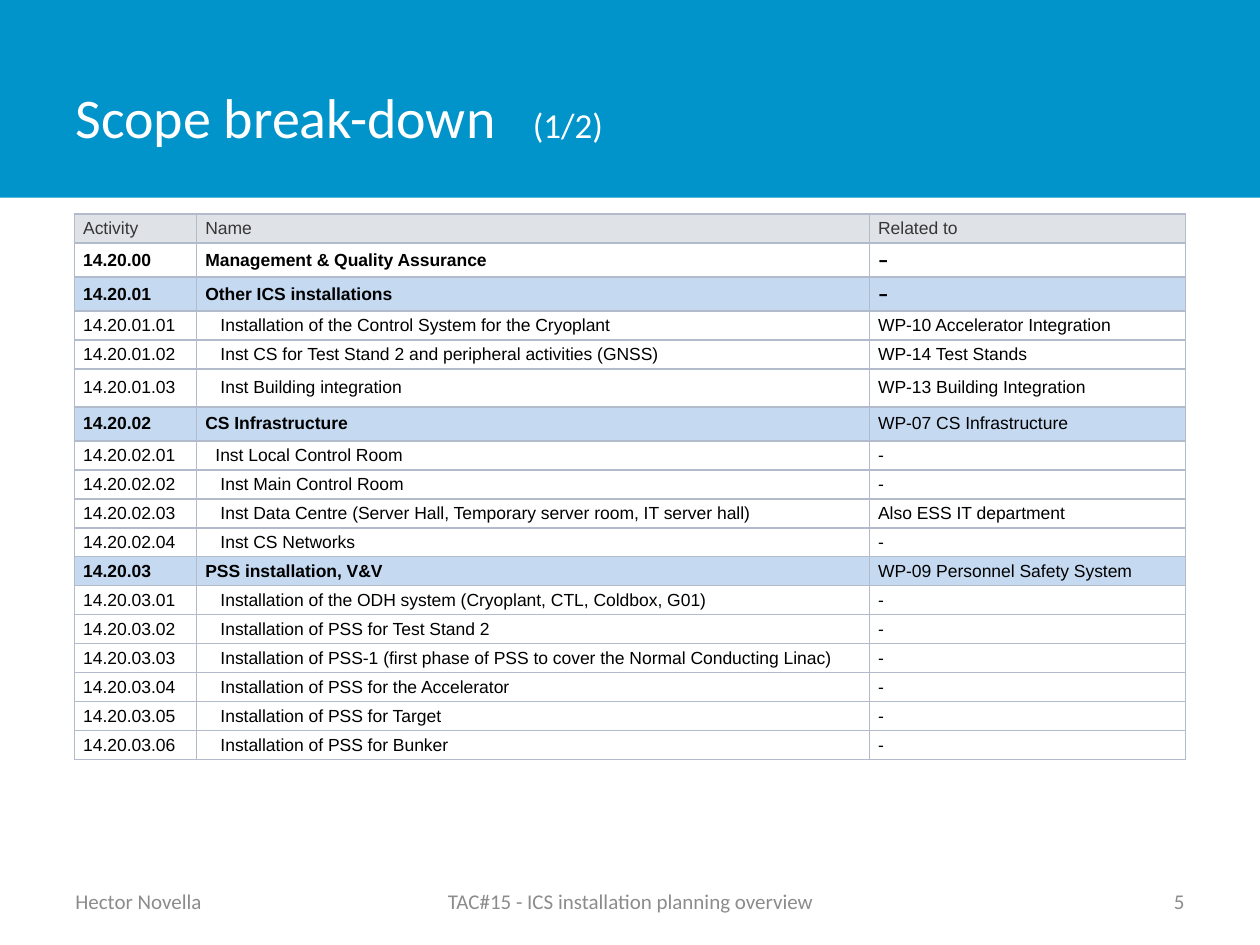
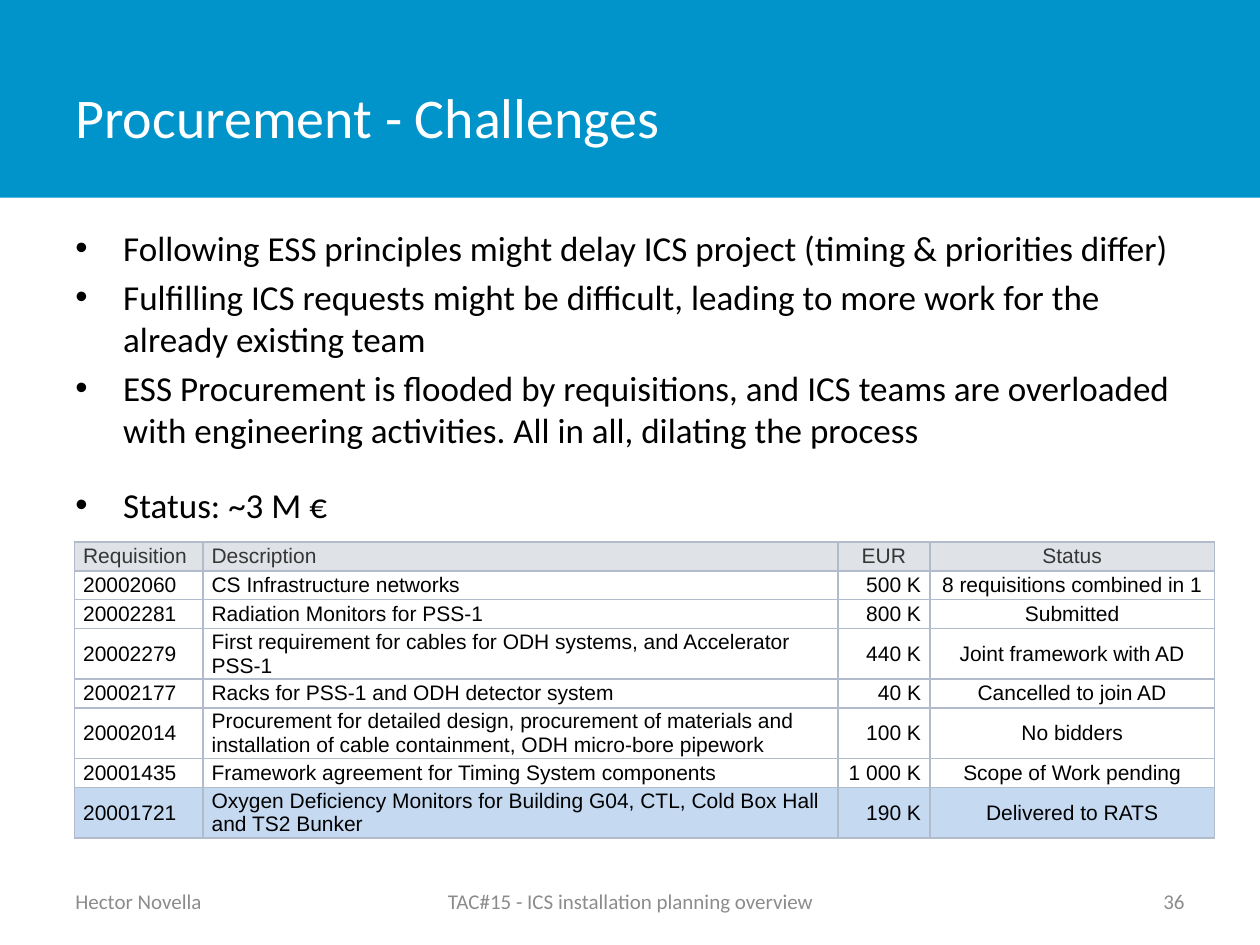
"""Build two planning slides that share a title band, a footer and a table style."""
from lxml import etree
from pptx import Presentation
from pptx import util as u
from pptx.dml.color import RGBColor
from pptx.enum import shapes, text
from pptx.oxml.ns import qn

COLOURS = {
    "band": "0094CA",
    "white": "FFFFFF",
    "black": "000000",
    "footer": "8C8C8C",
    "grid": "B1BBCC",
    "header_fill": "DFE3E8",
    "header_text": "363636",
    "highlight": "C5D9F1",
}
LEFT, CENTRE, RIGHT = text.PP_ALIGN.LEFT, text.PP_ALIGN.CENTER, text.PP_ALIGN.RIGHT
AUTHOR = "Hector Novella"
MEETING = "TAC#15 - ICS installation planning overview"
ROW_HEIGHT, TWO_LINE_HEIGHT, SECTION_HEIGHT = 0.23, 0.37, 0.27
CELL_MARGIN = 0.07
SUBITEM_INDENT = 0.12

ACTIVITY_COLUMNS = [("Activity", 0.97, LEFT), ("Name", 5.34, LEFT), ("Related to", 2.51, LEFT)]
ACTIVITIES = [
    ("14.20.00", "Management & Quality Assurance", "-"),
    ("14.20.01", "Other ICS installations", "-"),
    ("14.20.01.01", "Installation of the Control System for the Cryoplant", "WP-10 Accelerator Integration"),
    ("14.20.01.02", "Inst CS for Test Stand 2 and peripheral activities (GNSS)", "WP-14 Test Stands"),
    ("14.20.01.03", "Inst Building integration", "WP-13 Building Integration"),
    ("14.20.02", "CS Infrastructure", "WP-07 CS Infrastructure"),
    ("14.20.02.01", "Inst Local Control Room", "-"),
    ("14.20.02.02", "Inst Main Control Room", "-"),
    ("14.20.02.03", "Inst Data Centre (Server Hall, Temporary server room, IT server hall)",
     "Also ESS IT department"),
    ("14.20.02.04", "Inst CS Networks", "-"),
    ("14.20.03", "PSS installation, V&V", "WP-09 Personnel Safety System"),
    ("14.20.03.01", "Installation of the ODH system (Cryoplant, CTL, Coldbox, G01)", "-"),
    ("14.20.03.02", "Installation of PSS for Test Stand 2", "-"),
    ("14.20.03.03", "Installation of PSS-1 (first phase of PSS to cover the Normal Conducting Linac)", "-"),
    ("14.20.03.04", "Installation of PSS for the Accelerator", "-"),
    ("14.20.03.05", "Installation of PSS for Target", "-"),
    ("14.20.03.06", "Installation of PSS for Bunker", "-"),
]
ACTIVITY_HEIGHTS = {"14.20.00": SECTION_HEIGHT, "14.20.01": SECTION_HEIGHT,
                    "14.20.01.03": 0.3, "14.20.02": SECTION_HEIGHT}

REQUISITION_COLUMNS = [("Requisition", 1.02, LEFT), ("Description", 5.04, LEFT),
                       ("EUR", 0.73, RIGHT), ("Status", 2.26, CENTRE)]
REQUISITIONS = [
    ("20002060", "CS Infrastructure networks", "500 K", "8 requisitions combined in 1"),
    ("20002281", "Radiation Monitors for PSS-1", "800 K", "Submitted"),
    ("20002279", "First requirement for cables for ODH systems, and Accelerator PSS-1",
     "440 K", "Joint framework with AD"),
    ("20002177", "Racks for PSS-1 and ODH detector system", "40 K", "Cancelled to join AD"),
    ("20002014", "Procurement for detailed design, procurement of materials and "
     "installation of cable containment, ODH micro-bore pipework", "100 K", "No bidders"),
    ("20001435", "Framework agreement for Timing System components", "1 000 K", "Scope of Work pending"),
    ("20001721", "Oxygen Deficiency Monitors for Building G04, CTL, Cold Box Hall and TS2 Bunker",
     "190 K", "Delivered to RATS"),
]
TWO_LINE_REQUISITIONS = ("20002279", "20002014", "20001721")

CHALLENGES = [
    ("Following ESS principles might delay ICS project (timing & priorities differ)", 0),
    ("Fulfilling ICS requests might be difficult, leading to more work for the already existing team", 4),
    ("ESS Procurement is flooded by requisitions, and ICS teams are overloaded with "
     "engineering activities. All in all, dilating the process", 4),
    ("Status: ~3 M €", 18.5),
]


def rgb(name):
    """Return the named colour."""
    return RGBColor.from_string(COLOURS[name])


def style_font(font, size, colour, family="Calibri", bold=False):
    """Set the look of a paragraph or run font."""
    font.size, font.name, font.bold = u.Pt(size), family, bold
    font.color.rgb = rgb(colour)


def add_text_box(slide, left, top, width, height, anchor=text.MSO_ANCHOR.MIDDLE):
    """Add a wrapping text box and return its text frame."""
    box = slide.shapes.add_textbox(*map(u.Inches, (left, top, width, height)))
    frame = box.text_frame
    frame.word_wrap = True
    frame.vertical_anchor = anchor
    return frame


def add_title_band(slide, title, counter=None, counter_offset=3.63):
    """Draw the top band with the title and an optional counter after a tab."""
    band = slide.shapes.add_shape(shapes.MSO_SHAPE.RECTANGLE, 0, 0, u.Inches(10), u.Inches(1.57))
    band.shadow.inherit = False
    band.fill.solid()
    band.fill.fore_color.rgb = rgb("band")
    band.line.fill.background()
    paragraph = add_text_box(slide, 0.5, 0.3, 7.81, 1.25).paragraphs[0]
    if counter:
        tabs = etree.SubElement(paragraph._p.get_or_add_pPr(), qn("a:tabLst"))
        etree.SubElement(tabs, qn("a:tab"), pos=str(u.Inches(counter_offset)), algn="l")
        title += "\t"
    style_font(paragraph.font, 32, "white")
    style_font(paragraph.add_run().font, 32, "white")
    paragraph.runs[0].text = title
    if counter:
        run = paragraph.add_run()
        run.text = counter
        style_font(run.font, 20, "white")


def add_footer(slide, number):
    """Write the author, meeting and slide number along the bottom."""
    parts = [(0.5, 2.33, AUTHOR, LEFT), (3.42, 3.17, MEETING, CENTRE), (7.17, 2.33, str(number), RIGHT)]
    for left, width, words, alignment in parts:
        paragraph = add_text_box(slide, left, 6.95, width, 0.4).paragraphs[0]
        paragraph.text = words
        paragraph.alignment = alignment
        style_font(paragraph.font, 12, "footer")


def add_bullets(slide, left, top, width, height):
    """List the challenges as hanging bullets."""
    frame = add_text_box(slide, left, top, width, height, text.MSO_ANCHOR.TOP)
    for index, (words, space_before) in enumerate(CHALLENGES):
        paragraph = frame.add_paragraph() if index else frame.paragraphs[0]
        paragraph.text = words
        properties = paragraph._p.get_or_add_pPr()
        properties.set("marL", str(u.Inches(0.38)))
        properties.set("indent", str(u.Inches(-0.38)))
        if space_before:
            paragraph.space_before = u.Pt(space_before)
        etree.SubElement(properties, qn("a:buFont"), typeface="Arial")
        etree.SubElement(properties, qn("a:buChar"), char="•")
        style_font(paragraph.font, 20, "black")


def fill_cell(cell, words, fill, alignment, size, colour="black"):
    """Write one bordered table cell and return its paragraph."""
    cell.vertical_anchor = text.MSO_ANCHOR.MIDDLE
    cell.margin_left = cell.margin_right = u.Inches(CELL_MARGIN)
    cell.margin_top = cell.margin_bottom = 0
    properties = cell._tc.get_or_add_tcPr()
    for side in ("lnL", "lnR", "lnT", "lnB"):
        border = etree.SubElement(properties, qn(f"a:{side}"), w=str(u.Pt(1)))
        solid = etree.SubElement(border, qn("a:solidFill"))
        etree.SubElement(solid, qn("a:srgbClr"), val=COLOURS["grid"])
    cell.fill.solid()
    cell.fill.fore_color.rgb = rgb(fill)
    paragraph = cell.text_frame.paragraphs[0]
    paragraph.text = words
    paragraph.alignment = alignment
    style_font(paragraph.font, size, colour, "Arial")
    return paragraph


def add_grid(slide, left, top, columns, records, heights, highlighted, size):
    """Add a table with a grey header; heights and highlights go by record key."""
    row_heights = [ROW_HEIGHT] + [heights.get(record[0], ROW_HEIGHT) for record in records]
    total_width = sum(width for _, width, _ in columns)
    frame = slide.shapes.add_table(len(row_heights), len(columns), *map(
        u.Inches, (left, top, total_width, sum(row_heights))))
    table = frame.table
    table.first_row = table.horz_banding = False
    for row, height in zip(table.rows, row_heights):
        row.height = u.Inches(height)
    for index, (heading, width, alignment) in enumerate(columns):
        table.columns[index].width = u.Inches(width)
        heading_alignment = LEFT if alignment == LEFT else CENTRE
        fill_cell(table.cell(0, index), heading, "header_fill", heading_alignment, size, "header_text")
        for row_index, record in enumerate(records, 1):
            fill = "highlight" if record[0] in highlighted else "white"
            fill_cell(table.cell(row_index, index), record[index], fill, alignment, size)
    return table


def build_scope_slide(slide):
    """Show the activities, with bold sections and indented sub-items."""
    add_title_band(slide, "Scope break-down", "(1/2)")
    add_footer(slide, 5)
    sections = [record[0] for record in ACTIVITIES if record[0].count(".") == 2]
    table = add_grid(slide, 0.59, 1.7, ACTIVITY_COLUMNS, ACTIVITIES, ACTIVITY_HEIGHTS, sections[1:], 10)
    for row_index, (activity, _, related) in enumerate(ACTIVITIES, 1):
        code, name, relation = (table.cell(row_index, column) for column in range(3))
        if activity in sections:
            for cell in (code, name):
                cell.text_frame.paragraphs[0].font.bold = True
            if related == "-":
                style_font(relation.text_frame.paragraphs[0].font, 14, "black", "Cabin")
        else:
            indent = 0.08 if activity == "14.20.02.01" else SUBITEM_INDENT
            name.margin_left = u.Inches(CELL_MARGIN + indent)


def build_procurement_slide(slide):
    """Show the procurement challenges above the requisition table."""
    add_title_band(slide, "Procurement - Challenges")
    add_bullets(slide, 0.5, 1.75, 9, 5.15)
    add_footer(slide, 36)
    heights = dict.fromkeys(TWO_LINE_REQUISITIONS, TWO_LINE_HEIGHT)
    add_grid(slide, 0.59, 4.3, REQUISITION_COLUMNS, REQUISITIONS, heights, ["20001721"], 12)


def main():
    """Create and save the presentation."""
    presentation = Presentation()
    presentation.slide_width, presentation.slide_height = u.Inches(10), u.Inches(7.5)
    for build in (build_scope_slide, build_procurement_slide):
        build(presentation.slides.add_slide(presentation.slide_layouts[6]))
    presentation.save("out.pptx")


if __name__ == "__main__":
    main()
